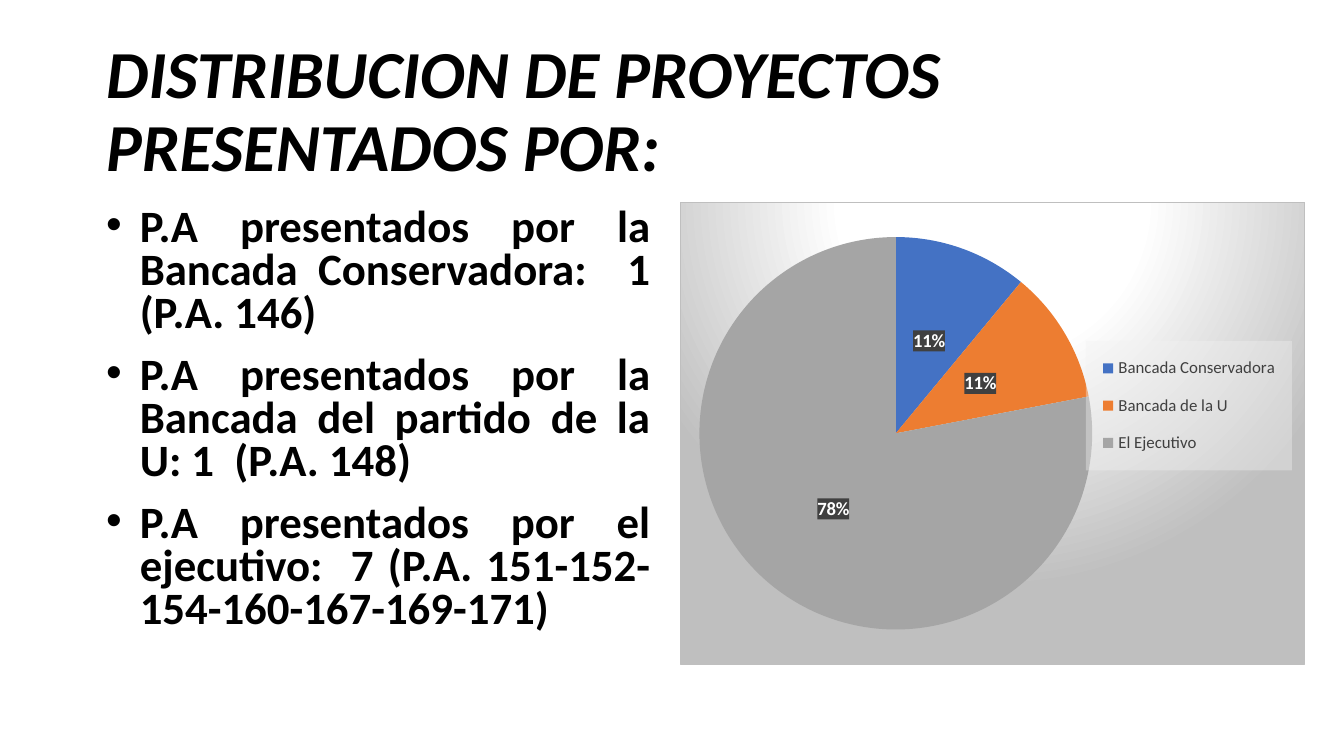
from pptx import Presentation
from pptx.chart.data import CategoryChartData as ChartData
from pptx.dml.color import RGBColor as RGB
from pptx.enum.chart import XL_CHART_TYPE as Kind
from pptx.enum.chart import XL_LABEL_POSITION as Spot
from pptx.enum.chart import XL_LEGEND_POSITION as Side
from pptx.enum.text import MSO_ANCHOR as Anchor
from pptx.enum.text import MSO_AUTO_SIZE as Fit
from pptx.enum.text import PP_ALIGN as Align
from pptx.oxml import parse_xml
from pptx.oxml.ns import nsdecls
from pptx.util import Inches, Pt

FONT = "Calibri"
HEX = {
    "ink": "000000", "white": "FFFFFF", "edge": "BFBFBF",
    "key": "404040", "tag": "404040", "pale": "F2F2F2",
}
HEAD = "DISTRIBUCION DE PROYECTOS PRESENTADOS POR:"
ITEMS = [
    "P.A presentados por la Bancada Conservadora:  1 (P.A. 146)",
    "P.A presentados por la Bancada del partido de la U: 1  (P.A. 148)",
    "P.A presentados por el ejecutivo:  7 (P.A. 151-152-154-160-167-169-171)",
]
SHARES = [  # name, percent, colour
    ("Bancada Conservadora", 11, "4472C4"),
    ("Bancada de la U", 11, "ED7D31"),
    ("El Ejecutivo ", 78, "A5A5A5"),
]


def style(font, size, color, bold=False, italic=False):
    font.name, font.size = FONT, Pt(size)
    font.bold, font.italic = bold, italic
    font.color.rgb = RGB.from_string(HEX[color])


def place(shape, box):
    shape.left, shape.top, shape.width, shape.height = map(Inches, box)
    frame = shape.text_frame
    frame.word_wrap, frame.auto_size = True, Fit.NONE
    return frame


def add_title(slide, box):
    frame = place(slide.shapes.title, box)
    frame.vertical_anchor = Anchor.MIDDLE
    para = frame.paragraphs[0]
    para.alignment, para.line_spacing = Align.LEFT, 0.9
    run = para.add_run()
    run.text = HEAD
    style(run.font, 36, "ink", bold=True, italic=True)


def add_list(slide, box):
    frame = place(slide.placeholders[1], box)
    frame.vertical_anchor = Anchor.TOP
    for i, item in enumerate(ITEMS):
        para = frame.add_paragraph() if i else frame.paragraphs[0]
        props = para._p.get_or_add_pPr()
        props.set("marL", str(Inches(0.25)))
        props.set("indent", str(Inches(-0.25)))
        props.append(parse_xml(f'<a:buFont {nsdecls("a")} typeface="Arial"/>'))
        props.append(parse_xml(f'<a:buChar {nsdecls("a")} char="•"/>'))
        para.alignment, para.line_spacing = Align.JUSTIFY, 0.8
        para.space_before = Pt(10 if i else 0)
        run = para.add_run()
        run.text = item
        style(run.font, 24, "ink", bold=True)


def sheer(color, alpha):
    """Shape properties with a see-through fill."""
    return parse_xml(
        f'<c:spPr {nsdecls("c", "a")}><a:solidFill><a:srgbClr val="{HEX[color]}">'
        f'<a:alpha val="{alpha * 1000}"/></a:srgbClr></a:solidFill></c:spPr>')


def layout(x, y, w, h, inner=False):
    """Manual layout in fractions of the chart."""
    target = '<c:layoutTarget val="inner"/>' if inner else ""
    modes = '<c:xMode val="edge"/><c:yMode val="edge"/>'
    sizes = "".join(f'<c:{k} val="{v}"/>' for k, v in zip("xywh", (x, y, w, h)))
    return parse_xml(
        f'<c:layout {nsdecls("c")}><c:manualLayout>{target}{modes}{sizes}'
        '</c:manualLayout></c:layout>')


def backdrop():
    stops = "".join(
        f'<a:gs pos="{pos * 1000}"><a:srgbClr val="{HEX[color]}"/></a:gs>'
        for pos, color in ((0, "white"), (39, "white"), (100, "edge")))
    return parse_xml(
        f'<c:spPr {nsdecls("c", "a")}><a:gradFill><a:gsLst>{stops}</a:gsLst>'
        '<a:path path="circle"><a:fillToRect l="50000" t="-80000" r="50000" '
        'b="180000"/></a:path></a:gradFill><a:ln w="9525"><a:solidFill>'
        f'<a:srgbClr val="{HEX["edge"]}"/></a:solidFill></a:ln></c:spPr>')


def add_pie(slide, box):
    data = ChartData()
    data.categories = [name for name, _, _ in SHARES]
    data.add_series("Series 1", [value for _, value, _ in SHARES])
    chart = slide.shapes.add_chart(Kind.PIE, *map(Inches, box), data).chart
    chart.has_title = False
    style(chart.font, 10, "ink")
    root = chart.element
    root.xpath("c:chart")[0].addnext(backdrop())

    # Slices
    plot = chart.plots[0]
    plot.vary_by_categories = True
    series = plot.series[0]
    for i, (_, _, color) in enumerate(SHARES):
        fill = series.points[i].format.fill
        fill.solid()
        fill.fore_color.rgb = RGB.from_string(color)
    area = root.xpath("c:chart/c:plotArea")[0]
    for old in area.xpath("c:layout"):
        area.remove(old)
    area.insert(0, layout(0.03, 0.07, 0.63, 0.86, inner=True))

    # Percent labels
    tags = series.data_labels
    tags.show_value, tags.show_percentage = False, True
    tags.number_format, tags.number_format_is_linked = "0%", False
    tags.position = Spot.CENTER
    style(tags.font, 10, "white", bold=True)
    root.xpath(".//c:ser/c:dLbls/c:txPr")[0].addprevious(sheer("tag", 90))

    # Legend laid over the pie
    chart.has_legend = True
    key = chart.legend
    key.position, key.include_in_layout = Side.RIGHT, True
    style(key.font, 9, "key")
    for old in root.xpath(".//c:legend/c:layout"):
        old.getparent().remove(old)
    over = root.xpath(".//c:legend/c:overlay")[0]
    over.addprevious(layout(0.65, 0.3, 0.33, 0.28))
    over.addnext(sheer("pale", 39))


def main():
    deck = Presentation()
    deck.slide_width = Inches(10)
    deck.slide_height = deck.slide_width * 9 // 16
    slide = deck.slides.add_slide(deck.slide_layouts[1])
    add_title(slide, (0.69, 0.3, 8.62, 1.09))
    add_list(slide, (0.69, 1.5, 4.25, 3.57))
    add_pie(slide, (5.06, 1.5, 4.65, 3.45))
    deck.save("out.pptx")


if __name__ == "__main__":
    main()
